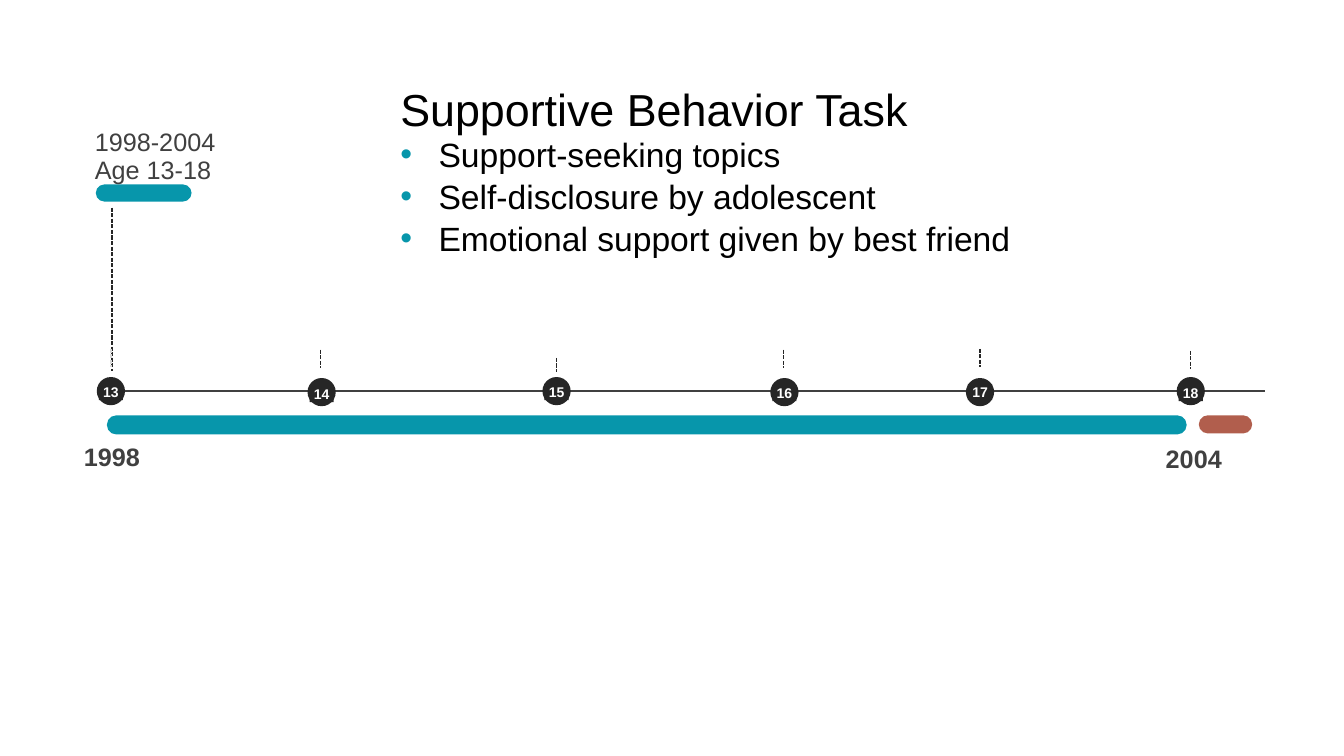
from dataclasses import dataclass

from lxml import etree
from pptx import Presentation
from pptx.dml.color import RGBColor
from pptx.enum.dml import MSO_LINE
from pptx.enum.shapes import MSO_CONNECTOR, MSO_SHAPE
from pptx.enum.text import MSO_ANCHOR, MSO_AUTO_SIZE, PP_ALIGN
from pptx.oxml.ns import qn
from pptx.util import Inches, Pt

STRAIGHT = MSO_CONNECTOR.STRAIGHT
OVAL, RECT, PILL = MSO_SHAPE.OVAL, MSO_SHAPE.RECTANGLE, MSO_SHAPE.ROUNDED_RECTANGLE
DASH = MSO_LINE.SQUARE_DOT
LEFT, CENTER = PP_ALIGN.LEFT, PP_ALIGN.CENTER
TOP, MIDDLE = MSO_ANCHOR.TOP, MSO_ANCHOR.MIDDLE
NO_FIT = MSO_AUTO_SIZE.NONE


@dataclass(frozen=True)
class Theme:
    font: str = "Arial"
    black: str = "000000"
    white: str = "FFFFFF"
    dark: str = "262626"
    gray: str = "404040"
    pale: str = "D9D9D9"
    teal: str = "0796AB"
    rust: str = "B15E4D"
    title: int = 32
    item: int = 24
    label: int = 18
    badge: int = 10


@dataclass(frozen=True)
class Box:
    x: float
    y: float
    w: float
    h: float


@dataclass(frozen=True)
class Age:
    """A badge on the axis, with the dashed tick above it."""
    text: str
    x: float
    y: float
    label_y: float
    tick_x: float
    start: float
    end: float
    color: str


@dataclass(frozen=True)
class Bar:
    box: Box
    color: str


@dataclass(frozen=True)
class Label:
    text: str
    box: Box
    align: PP_ALIGN
    bold: bool


THEME = Theme()
DOT = 0.28
TAG_W, TAG_H = 0.24, 0.16

AGES = [
    Age("13", 0.96, 3.74, 3.81, 1.1, 3.46, 3.64, THEME.pale),
    Age("14", 3.05, 3.75, 3.83, 3.18, 3.47, 3.65, THEME.dark),
    Age("15", 5.38, 3.74, 3.81, 5.52, 3.55, 3.69, THEME.dark),
    Age("16", 7.64, 3.75, 3.82, 7.77, 3.47, 3.65, THEME.dark),
    Age("17", 9.58, 3.75, 3.81, 9.72, 3.46, 3.64, THEME.dark),
    Age("18", 11.67, 3.74, 3.82, 11.81, 3.48, 3.66, THEME.dark),
]
BARS = [
    Bar(Box(0.95, 1.83, 0.95, 0.17), THEME.teal),
    Bar(Box(1.06, 4.12, 10.71, 0.19), THEME.teal),
    Bar(Box(11.89, 4.12, 0.53, 0.18), THEME.rust),
]
LABELS = [
    Label("1998-2004", Box(0.94, 1.25, 1.42, 0.3), LEFT, False),
    Label("Age 13-18", Box(0.94, 1.53, 1.42, 0.26), LEFT, False),
    Label("1998", Box(0.8, 4.38, 0.62, 0.26), CENTER, True),
    Label("2004", Box(11.53, 4.4, 0.62, 0.26), CENTER, True),
]
TITLE = "Supportive Behavior Task"
TITLE_BOX = Box(3.97, 0.81, 9, 0.52)
ITEMS = [
    "Support-seeking topics",
    "Self-disclosure by adolescent",
    "Emotional support given by best friend",
]
ITEMS_BOX = Box(3.97, 1.33, 9, 1.2)


def place(shape, box: Box) -> None:
    shape.left, shape.top = Inches(box.x), Inches(box.y)
    shape.width, shape.height = Inches(box.w), Inches(box.h)


def setup(frame, anchor: MSO_ANCHOR) -> None:
    """Clear the margins and fix how the text sits in its frame."""
    frame.margin_left = frame.margin_right = 0
    frame.margin_top = frame.margin_bottom = 0
    frame.word_wrap = True
    frame.auto_size = NO_FIT
    frame.vertical_anchor = anchor


def write(para, text: str, size: int, color: str,
          align: PP_ALIGN = LEFT, bold: bool = False) -> None:
    para.alignment = align
    run = para.add_run()
    run.text = text
    run.font.name = THEME.font
    run.font.size = Pt(size)
    run.font.bold = bold
    run.font.color.rgb = RGBColor.from_string(color)


def bullet(para) -> None:
    props = para._p.get_or_add_pPr()
    props.set("marL", str(Inches(0.38)))
    props.set("indent", str(-Inches(0.38)))
    tint = etree.SubElement(props, qn("a:buClr"))
    etree.SubElement(tint, qn("a:srgbClr"), val=THEME.teal)
    etree.SubElement(props, qn("a:buFont"), typeface=THEME.font)
    etree.SubElement(props, qn("a:buChar"), char="•")


def draw(slide, kind: MSO_SHAPE, box: Box, color: str):
    shape = slide.shapes.add_shape(kind, 0, 0, 0, 0)
    place(shape, box)
    shape.shadow.inherit = False
    shape.fill.solid()
    shape.fill.fore_color.rgb = RGBColor.from_string(color)
    shape.line.fill.background()
    if kind == PILL:
        shape.adjustments[0] = 0.5
    return shape


def rule(slide, x1: float, y1: float, x2: float, y2: float,
         color: str, width: float = 1, dashed: bool = True) -> None:
    line = slide.shapes.add_connector(
        STRAIGHT, Inches(x1), Inches(y1), Inches(x2), Inches(y2))
    line.line.color.rgb = RGBColor.from_string(color)
    line.line.width = Pt(width)
    if dashed:
        line.line.dash_style = DASH
    etree.SubElement(line._element.spPr, qn("a:effectLst"))


def add_label(slide, label: Label) -> None:
    shape = slide.shapes.add_textbox(0, 0, 0, 0)
    place(shape, label.box)
    setup(shape.text_frame, TOP)
    write(shape.text_frame.paragraphs[0], label.text, THEME.label,
          THEME.gray, label.align, label.bold)


def add_age(slide, age: Age) -> None:
    rule(slide, age.tick_x, age.start, age.tick_x, age.end, age.color)
    draw(slide, OVAL, Box(age.x, age.y, DOT, DOT), THEME.dark)
    tag_x = age.x + (DOT - TAG_W) / 2
    tag = draw(slide, RECT, Box(tag_x, age.label_y, TAG_W, TAG_H), THEME.dark)
    setup(tag.text_frame, MIDDLE)
    write(tag.text_frame.paragraphs[0], age.text, THEME.badge,
          THEME.white, CENTER, True)


def add_text(slide) -> None:
    """Fill the title and the list."""
    title, body = slide.shapes.title, slide.placeholders[1]
    for shape, box in ((title, TITLE_BOX), (body, ITEMS_BOX)):
        place(shape, box)
        setup(shape.text_frame, TOP)
    write(title.text_frame.paragraphs[0], TITLE, THEME.title, THEME.black)
    frame = body.text_frame
    for i, item in enumerate(ITEMS):
        para = frame.add_paragraph() if i else frame.paragraphs[0]
        bullet(para)
        para.space_before = Pt(1 if i else 0)
        write(para, item, THEME.item, THEME.black)


def main() -> None:
    deck = Presentation()
    deck.slide_width, deck.slide_height = Inches(13.33), Inches(7.5)
    slide = deck.slides.add_slide(deck.slide_layouts[1])
    add_text(slide)
    rule(slide, 1.14, 3.88, 12.55, 3.88, THEME.gray, 1.25, False)
    rule(slide, 1.11, 2.06, 1.11, 3.68, THEME.dark)
    for bar in BARS:
        draw(slide, PILL, bar.box, bar.color)
    for age in AGES:
        add_age(slide, age)
    for label in LABELS:
        add_label(slide, label)
    deck.save("out.pptx")


if __name__ == "__main__":
    main()
